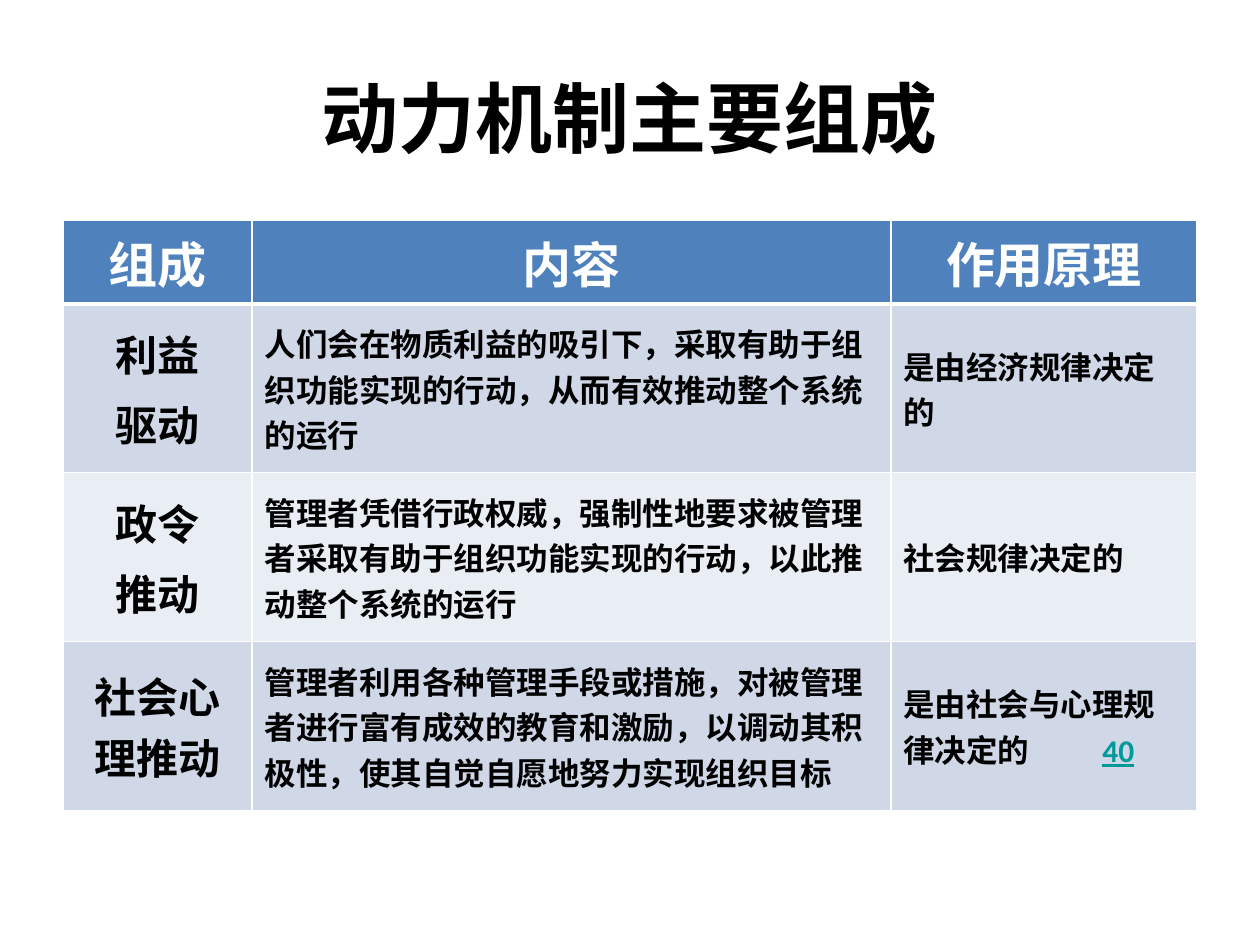
import pptx
import pptx.util
import pptx.dml.color
import pptx.enum.text
import pptx.oxml.ns
import lxml.etree

Inches, Pt = pptx.util.Inches, pptx.util.Pt
RGBColor = pptx.dml.color.RGBColor
ALIGN = pptx.enum.text.PP_ALIGN
MIDDLE = pptx.enum.text.MSO_ANCHOR.MIDDLE
qn = pptx.oxml.ns.qn

BLACK = RGBColor(0x00, 0x00, 0x00)
WHITE = RGBColor(0xFF, 0xFF, 0xFF)
HEADER_BLUE = RGBColor(0x4F, 0x81, 0xBD)
BAND_DARK = RGBColor(0xD0, 0xD8, 0xE8)
BAND_LIGHT = RGBColor(0xE9, 0xED, 0xF4)
TEAL = RGBColor(0x00, 0x99, 0x99)

LATIN_FONT = "Calibri"
CHINESE_FONT = "Noto Sans CJK SC"

COLUMN_WIDTHS = [1.5, 5.07, 2.43]
ROW_HEIGHTS = [0.66, 1.34, 1.34, 1.34]
ROWS = [
    ["组成", "内容", "作用原理"],
    ["利益\n驱动",
     "人们会在物质利益的吸引下，采取有助于组织功能实现的行动，从而有效推动整个系统的运行",
     "是由经济规律决定的"],
    ["政令\n推动",
     "管理者凭借行政权威，强制性地要求被管理者采取有助于组织功能实现的行动，以此推动整个系统的运行",
     "社会规律决定的"],
    ["社会心理推动",
     "管理者利用各种管理手段或措施，对被管理者进行富有成效的教育和激励，以调动其积极性，使其自觉自愿地努力实现组织目标",
     "是由社会与心理规律决定的"],
]


def add_span(para, text, size=18, color=BLACK, font=LATIN_FONT, underline=None):
    """Add one bold run to a paragraph."""
    span = para.add_run()
    span.text = text
    span.font.name = font
    span.font.size = Pt(size)
    span.font.bold = True
    span.font.underline = underline
    span.font.color.rgb = color
    east_asian = lxml.etree.Element(qn("a:ea"), typeface=CHINESE_FONT)
    span.font._element.find(qn("a:latin")).addnext(east_asian)


def write_text(frame, text, align=ALIGN.LEFT, size=18, **span_format):
    """Write one paragraph per line, with 20% of the size between them."""
    for index, line in enumerate(text.split("\n")):
        para = frame.add_paragraph() if index else frame.paragraphs[0]
        para.alignment = align
        para.space_before = Pt(size * 0.2 if index else 0)
        add_span(para, line, size=size, **span_format)


def set_borders(cell, **widths):
    """Draw white borders; widths are in points for L, R, T and B."""
    properties = cell._tc.get_or_add_tcPr()
    for side, width in widths.items():
        line = lxml.etree.SubElement(properties, qn(f"a:ln{side}"), w=str(Pt(width)))
        fill = lxml.etree.SubElement(line, qn("a:solidFill"))
        lxml.etree.SubElement(fill, qn("a:srgbClr"), val=str(WHITE))


def add_page_reference(para, text, position):
    """Add an underlined number at a tab stop."""
    tabs = lxml.etree.SubElement(para._p.get_or_add_pPr(), qn("a:tabLst"))
    lxml.etree.SubElement(tabs, qn("a:tab"), pos=str(position), algn="l")
    add_span(para, "\t")
    add_span(para, text, color=TEAL, underline=True)


def add_title(page, text):
    title = page.shapes.title
    title.left, title.top = Inches(0.5), Inches(0.3)
    title.width, title.height = Inches(9), Inches(1.25)
    title.text_frame.vertical_anchor = MIDDLE
    write_text(title.text_frame, text, align=ALIGN.CENTER, size=44, font=CHINESE_FONT)


def add_mechanism_table(page):
    table = page.shapes.add_table(
        len(ROWS), len(COLUMN_WIDTHS), Inches(0.5), Inches(1.75),
        Inches(sum(COLUMN_WIDTHS)), Inches(sum(ROW_HEIGHTS))).table
    for column, width in zip(table.columns, COLUMN_WIDTHS):
        column.width = Inches(width)
    for row, height in zip(table.rows, ROW_HEIGHTS):
        row.height = Inches(height)

    for r, texts in enumerate(ROWS):
        for c, text in enumerate(texts):
            cell = table.cell(r, c)
            cell.vertical_anchor = MIDDLE
            # The rule under the header is thicker
            set_borders(cell, L=1, R=1, T=3 if r == 1 else 1, B=3 if r == 0 else 1)
            cell.fill.solid()
            if r == 0:
                cell.fill.fore_color.rgb = HEADER_BLUE
                write_text(cell.text_frame, text, align=ALIGN.CENTER, size=28, color=WHITE)
                continue
            cell.fill.fore_color.rgb = BAND_DARK if r % 2 else BAND_LIGHT
            if c == 0:
                write_text(cell.text_frame, text, align=ALIGN.CENTER, size=24)
            else:
                write_text(cell.text_frame, text)
    return table


def main():
    deck = pptx.Presentation()
    deck.slide_width, deck.slide_height = Inches(10), Inches(7.5)
    page = deck.slides.add_slide(deck.slide_layouts[5])

    # Title
    add_title(page, "动力机制主要组成")

    # Table, with the page number in its last cell
    table = add_mechanism_table(page)
    last_cell = table.cell(len(ROWS) - 1, len(COLUMN_WIDTHS) - 1)
    add_page_reference(last_cell.text_frame.paragraphs[0], "40", Inches(1.58))

    deck.save("out.pptx")


if __name__ == "__main__":
    main()
